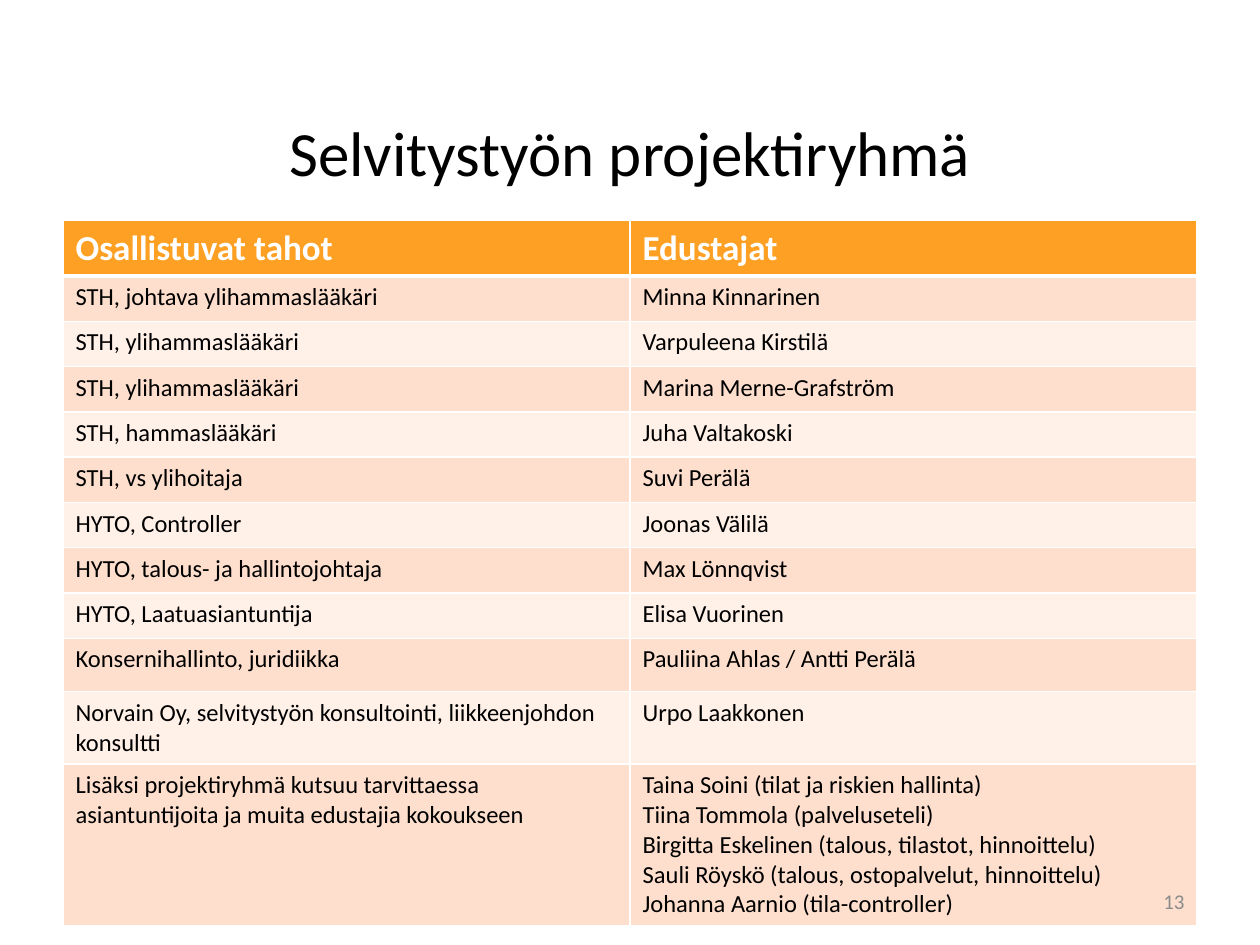
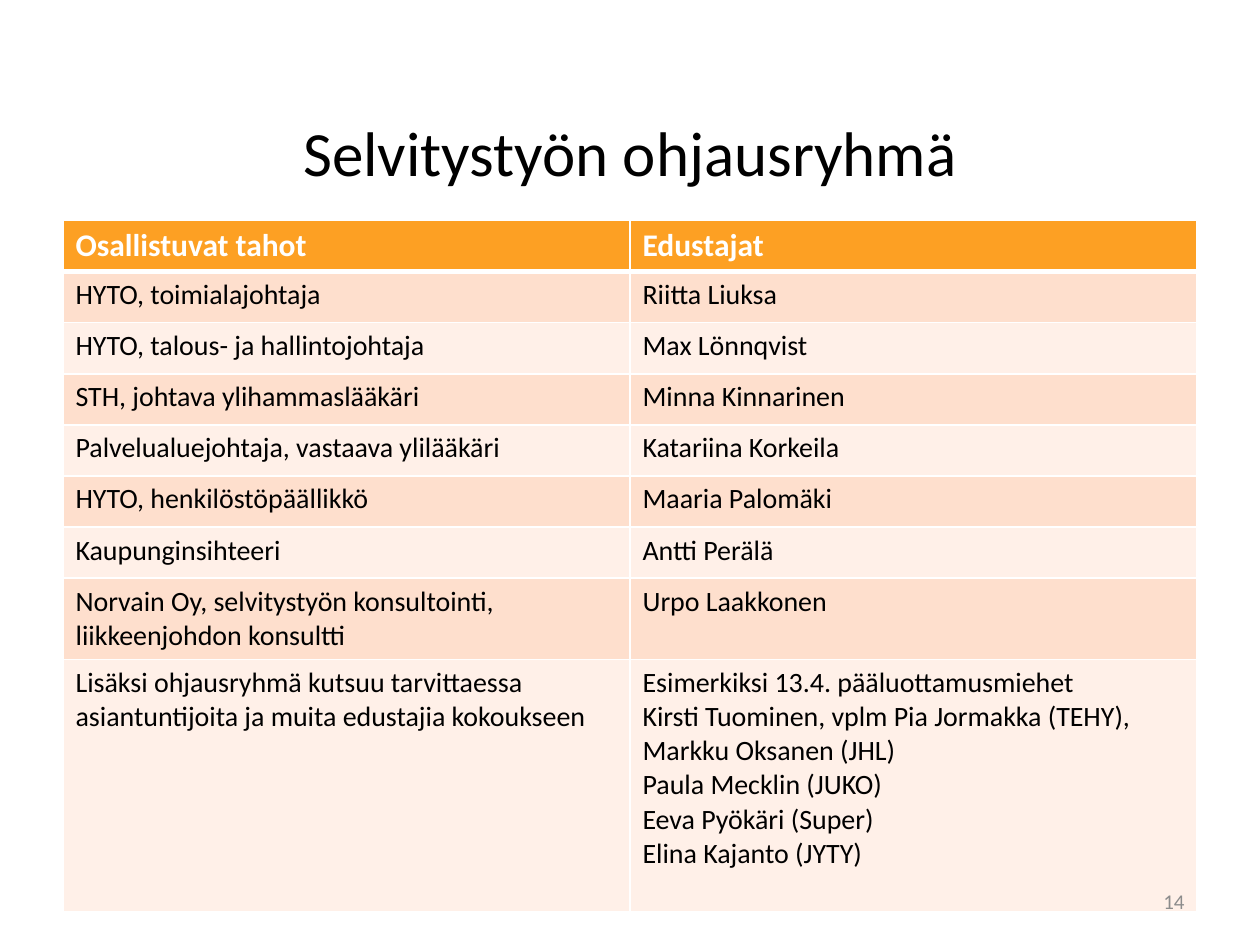
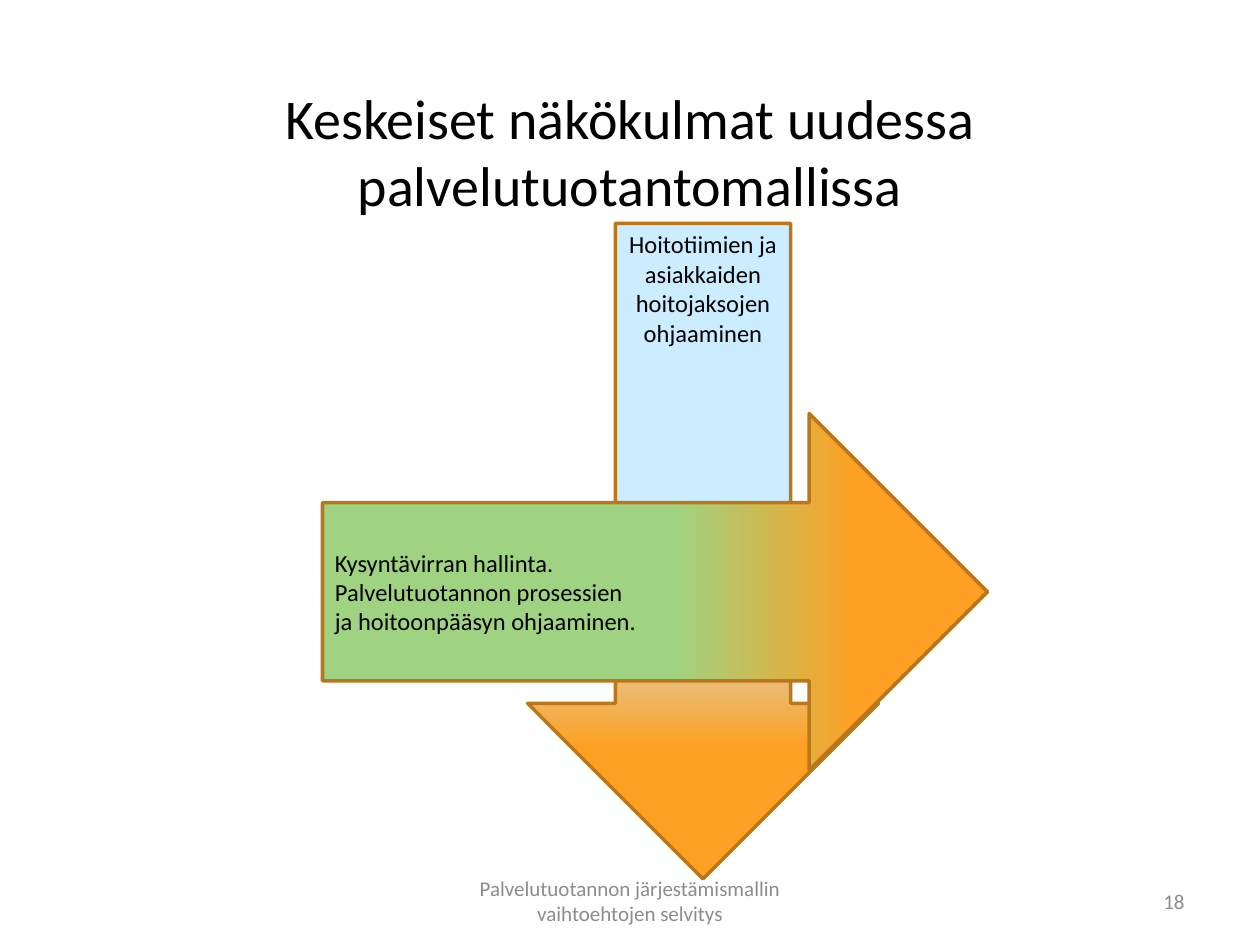
import pptx
import pptx.dml.color
import pptx.enum.shapes
import pptx.enum.text
import pptx.oxml
import pptx.oxml.ns
import pptx.util

Pt = pptx.util.Pt
ALIGN = pptx.enum.text.PP_ALIGN
ANCHOR = pptx.enum.text.MSO_ANCHOR
SHAPE = pptx.enum.shapes.MSO_SHAPE

FONT = "Calibri"
COLORS = {
    "text": "000000",
    "white": "FFFFFF",
    "muted": "8C8C8C",
    "orange": "FDA023",
    "band_dark": "FEDFCD",
    "band_light": "FFF0E8",
    "outline": "BB761A",
    "sky": "CCECFF",
    "green": "A0D381",
}
TITLE_BOX = (36, 21.6, 648, 90)
TALL_TITLE_BOX = (36, 27.4, 648, 100.8)
FOOTER_BOX = (246, 500.4, 228, 28.8)
NUMBER_BOX = (516, 500.4, 168, 28.8)
TABLE_BOX = (36, 126, 648)
DOWN_BOX = (301.5, 127.6, 200.5, 374.6)
RIGHT_BOX = (184.3, 236.3, 380, 203.8)

HEADINGS = ("Osallistuvat tahot", "Edustajat")
CONSULTANT = ("Norvain Oy, selvitystyön konsultointi, liikkeenjohdon konsultti",
              "Urpo Laakkonen")
PROJECT_GROUP = [
    HEADINGS,
    ("STH, johtava ylihammaslääkäri", "Minna Kinnarinen"),
    ("STH, ylihammaslääkäri", "Varpuleena Kirstilä"),
    ("STH, ylihammaslääkäri", "Marina Merne-Grafström"),
    ("STH, hammaslääkäri", "Juha Valtakoski"),
    ("STH, vs ylihoitaja", "Suvi Perälä"),
    ("HYTO, Controller", "Joonas Välilä"),
    ("HYTO, talous- ja hallintojohtaja", "Max Lönnqvist"),
    ("HYTO, Laatuasiantuntija", "Elisa Vuorinen"),
    ("Konsernihallinto, juridiikka", "Pauliina Ahlas / Antti Perälä"),
    CONSULTANT,
    ("Lisäksi projektiryhmä kutsuu tarvittaessa asiantuntijoita ja muita "
     "edustajia kokoukseen",
     "Taina Soini (tilat ja riskien hallinta)\n"
     "Tiina Tommola (palveluseteli)\n"
     "Birgitta Eskelinen (talous, tilastot, hinnoittelu)\n"
     "Sauli Röyskö (talous, ostopalvelut, hinnoittelu)\n"
     "Johanna Aarnio (tila-controller)"),
]
STEERING_GROUP = [
    HEADINGS,
    ("HYTO, toimialajohtaja", "Riitta Liuksa"),
    ("HYTO, talous- ja hallintojohtaja", "Max Lönnqvist"),
    ("STH, johtava ylihammaslääkäri", "Minna Kinnarinen"),
    ("Palvelualuejohtaja, vastaava ylilääkäri", "Katariina Korkeila"),
    ("HYTO, henkilöstöpäällikkö", "Maaria Palomäki"),
    ("Kaupunginsihteeri", "Antti Perälä"),
    CONSULTANT,
    ("Lisäksi ohjausryhmä kutsuu tarvittaessa asiantuntijoita ja muita "
     "edustajia kokoukseen",
     "Esimerkiksi 13.4. pääluottamusmiehet\n"
     "Kirsti Tuominen, vplm Pia Jormakka (TEHY),\n"
     "Markku Oksanen (JHL)\n"
     "Paula Mecklin (JUKO)\n"
     "Eeva Pyökäri (Super)\n"
     "Elina Kajanto (JYTY)"),
]


def rgb(name):
    return pptx.dml.color.RGBColor.from_string(COLORS[name])


def write(frame, text, size, color="text", align=ALIGN.LEFT, bold=False):
    """Fill a text frame, one paragraph for each line of text."""
    frame.text = text
    for para in frame.paragraphs:
        para.alignment = align
        for span in para.runs:
            values = {"name": FONT, "size": Pt(size), "bold": bold}
            for name, value in values.items():
                setattr(span.font, name, value)
            span.font.color.rgb = rgb(color)


def add_page(deck, title, number, box=TITLE_BOX, size=36):
    page = deck.slides.add_slide(deck.slide_layouts[5])
    heading = page.shapes.title
    for name, value in zip(("left", "top", "width", "height"), box):
        setattr(heading, name, Pt(value))
    heading.text_frame.auto_size = pptx.enum.text.MSO_AUTO_SIZE.NONE
    heading.text_frame.vertical_anchor = ANCHOR.BOTTOM
    write(heading.text_frame, title, size, align=ALIGN.CENTER)
    return page


def add_footer(page, text, box, align):
    footer = page.shapes.add_textbox(*map(Pt, box))
    footer.text_frame.word_wrap = True
    footer.text_frame.vertical_anchor = ANCHOR.MIDDLE
    write(footer.text_frame, text, 12, "muted", align)


def add_borders(cell, top, bottom):
    """Draw white cell edges; the side edges are one point wide."""
    properties = cell._tc.get_or_add_tcPr()
    for side, width in (("L", 1), ("R", 1), ("T", top), ("B", bottom)):
        properties.append(pptx.oxml.parse_xml(
            f'<a:ln{side} {pptx.oxml.ns.nsdecls("a")} w="{Pt(width)}">'
            f'<a:solidFill><a:srgbClr val="{COLORS["white"]}"/></a:solidFill>'
            f'</a:ln{side}>'))


def add_member_table(page, rows, heights, head_size, body_size, box=TABLE_BOX):
    left, top, width = box
    columns = len(HEADINGS)
    table = page.shapes.add_table(
        len(rows), columns, Pt(left), Pt(top), Pt(width), Pt(sum(heights))).table
    for column in table.columns:
        column.width = Pt(width / columns)
    for index, (texts, height) in enumerate(zip(rows, heights)):
        table.rows[index].height = Pt(height)
        is_head = index == 0
        band = "band_dark" if index % 2 else "band_light"
        for cell, text in zip(table.rows[index].cells, texts):
            add_borders(cell, 3 if index == 1 else 1, 3 if is_head else 1)
            cell.fill.solid()
            cell.fill.fore_color.rgb = rgb("orange" if is_head else band)
            write(cell.text_frame, text, head_size if is_head else body_size,
                  "white" if is_head else "text", bold=is_head)


def add_arrow(page, kind, box, start_color, angle, text, align, anchor):
    """Add a block arrow that fades to orange towards its head."""
    arrow = page.shapes.add_shape(kind, *map(Pt, box))
    arrow.shadow.inherit = False
    arrow.fill.gradient()
    arrow.fill.gradient_angle = angle
    stops = ((start_color, 0.53), ("orange", 0.8))
    for stop, (color, position) in zip(arrow.fill.gradient_stops, stops):
        stop.color.rgb = rgb(color)
        stop.position = position
    arrow.line.color.rgb = rgb("outline")
    arrow.line.width = Pt(2)
    arrow.text_frame.word_wrap = True
    arrow.text_frame.vertical_anchor = anchor
    write(arrow.text_frame, text, 14, align=align)


def add_group_page(deck, title, number, *table_values):
    page = add_page(deck, title, number)
    add_member_table(page, *table_values)
    add_footer(page, number, NUMBER_BOX, ALIGN.RIGHT)


def add_viewpoint_page(deck):
    page = add_page(deck, "Keskeiset näkökulmat uudessa palvelutuotantomallissa",
                    "18", TALL_TITLE_BOX, 32)
    add_footer(page, "Palvelutuotannon järjestämismallin vaihtoehtojen selvitys",
               FOOTER_BOX, ALIGN.CENTER)
    add_footer(page, "18", NUMBER_BOX, ALIGN.RIGHT)
    add_arrow(page, SHAPE.DOWN_ARROW, DOWN_BOX, "sky", 270,
              "Hoitotiimien ja asiakkaiden hoitojaksojen ohjaaminen",
              ALIGN.CENTER, ANCHOR.TOP)
    add_arrow(page, SHAPE.RIGHT_ARROW, RIGHT_BOX, "green", 0,
              "Kysyntävirran hallinta.\nPalvelutuotannon prosessien\n"
              "ja hoitoonpääsyn ohjaaminen.", ALIGN.LEFT, ANCHOR.MIDDLE)


def main():
    deck = pptx.Presentation()
    deck.slide_width, deck.slide_height = Pt(720), Pt(540)
    add_group_page(deck, "Selvitystyön projektiryhmä", "13", PROJECT_GROUP,
                   [31.4] + [25.9] * 8 + [30.5, 41.4, 92.4], 20, 14)
    add_group_page(deck, "Selvitystyön ohjausryhmä", "14", STEERING_GROUP,
                   [29.2] * 7 + [46.4, 144], 18, 16)
    add_viewpoint_page(deck)
    deck.save("out.pptx")


if __name__ == "__main__":
    main()
